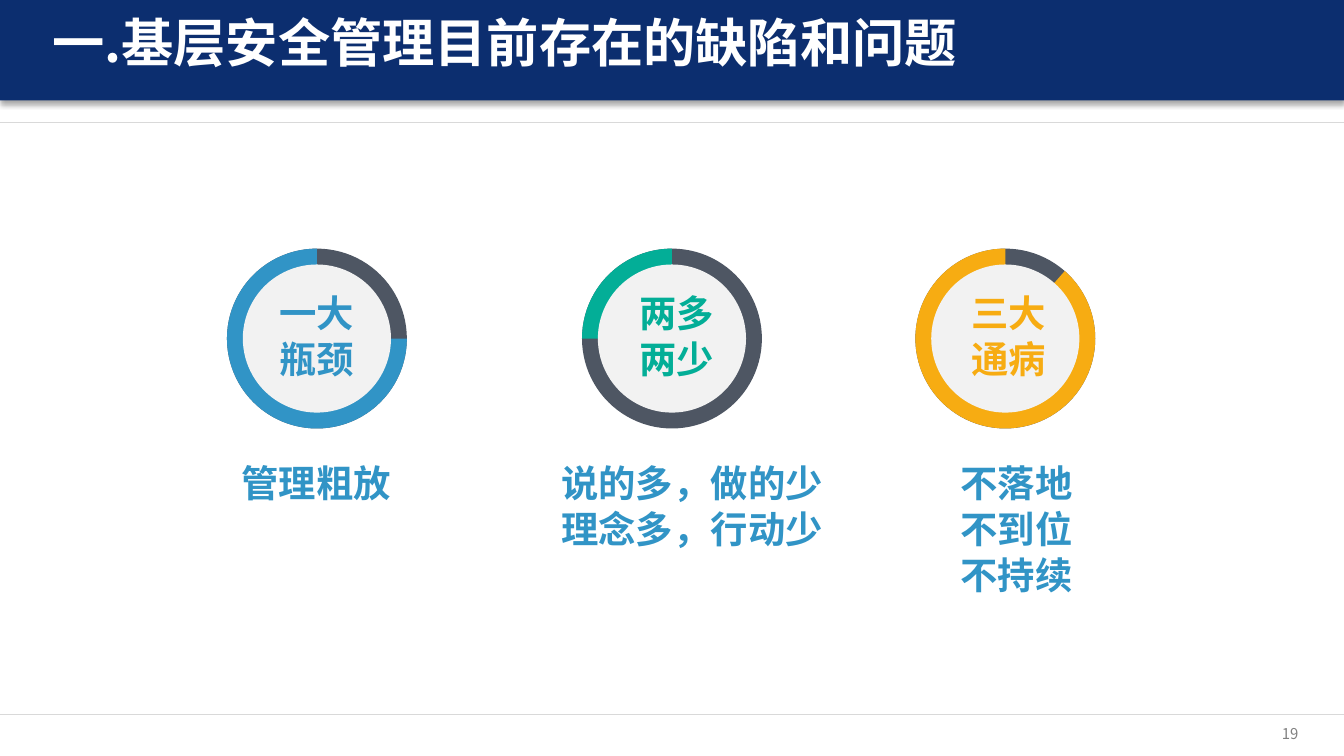
import pptx
import pptx.util
import pptx.dml.color
import pptx.enum.shapes
import pptx.enum.text
import pptx.oxml.ns
from lxml import etree

Cm = pptx.util.Cm
Pt = pptx.util.Pt
SHAPE = pptx.enum.shapes.MSO_SHAPE
ALIGN = pptx.enum.text.PP_ALIGN
ANCHOR = pptx.enum.text.MSO_ANCHOR
qn = pptx.oxml.ns.qn

FONT = "Noto Sans CJK SC"
COLORS = {
    "navy": "0C2E6F", "white": "FFFFFF", "rule": "D9D9D9", "slate": "4E5663",
    "disc": "F2F2F2", "blue": "3194C6", "green": "03AE97", "amber": "F7AC12",
    "gray": "808080", "black": "000000",
}
WIDTH, HEIGHT = 25.4, 14.29
RING_Y, RING_SIZE, DISC_SIZE = 6.4, 3.4, 2.8
LABEL_WIDTH, LABEL_HEIGHT = 3.18, 1.86
NOTE_TOP, NOTE_LINE = 8.79, 0.94
RULES = [2.31, 13.51]

TITLE = "一.基层安全管理目前存在的缺陷和问题"
PAGE_NUMBER = "19"
RINGS = [
    {"x": 5.99, "color": "blue", "start": 0, "label": ["一大", "瓶颈"], "label_x": 5.99,
     "note": ["管理粗放"], "note_x": 5.98, "note_width": 4.29},
    {"x": 12.7, "color": "green", "start": 180, "label": ["两多", "两少"], "label_x": 12.79,
     "note": ["说的多，做的少", "理念多，行动少"], "note_x": 13.08, "note_width": 5.94},
    {"x": 19.0, "color": "amber", "start": 311.4, "label": ["三大", "通病"], "label_x": 19.06,
     "note": ["不落地", "不到位", "不持续"], "note_x": 19.21, "note_width": 4.29},
]


def rgb(name):
    return pptx.dml.color.RGBColor.from_string(COLORS[name])


def write(box, lines, size, color, bold=True, align=ALIGN.CENTER,
          anchor=ANCHOR.TOP, before=0, spacing=0.9):
    frame = box.text_frame
    frame.word_wrap = True
    frame.auto_size = pptx.enum.text.MSO_AUTO_SIZE.NONE
    frame.vertical_anchor = anchor
    frame.margin_left = frame.margin_right = frame.margin_top = frame.margin_bottom = 0
    for index, line in enumerate(lines):
        para = frame.add_paragraph() if index else frame.paragraphs[0]
        para.alignment = align
        para.space_before = Pt(before)
        para.line_spacing = spacing
        span = para.add_run()
        span.text = line
        span.font.name = FONT
        span.font.size = Pt(size)
        span.font.bold = bold
        span.font.color.rgb = rgb(color)
    for props in box.element.iter(qn("a:rPr")):
        etree.SubElement(props, qn("a:ea"), typeface=FONT)


def add_filled(shapes, kind, left, top, width, height, color):
    shape = shapes.add_shape(kind, Cm(left), Cm(top), Cm(width), Cm(height))
    shape.shadow.inherit = False
    shape.fill.solid()
    shape.fill.fore_color.rgb = rgb(color)
    shape.line.fill.background()
    return shape


def add_round(shapes, kind, x, size, color):
    return add_filled(shapes, kind, x - size / 2, RING_Y - size / 2, size, size, color)


def add_text(shapes, lines, left, top, width, height, **style):
    box = shapes.add_textbox(Cm(left), Cm(top), Cm(width), Cm(height))
    write(box, lines, **style)


def add_rule(page, y):
    rule = page.shapes.add_connector(
        pptx.enum.shapes.MSO_CONNECTOR.STRAIGHT, Cm(0), Cm(y), Cm(WIDTH), Cm(y))
    rule.line.color.rgb = rgb("rule")
    rule.line.width = Pt(0.25)
    etree.SubElement(rule.element.spPr, qn("a:effectLst"))


def add_header(page):
    bar = add_filled(page.shapes, SHAPE.RECTANGLE, 0, -0.13, WIDTH, 2.03, "navy")
    effects = bar.element.spPr.find(qn("a:effectLst"))
    shadow = etree.SubElement(effects, qn("a:outerShdw"), blurRad=str(Pt(3)),
                              dist=str(Pt(1.8)), dir="5400000", algn="t", rotWithShape="0")
    tint = etree.SubElement(shadow, qn("a:srgbClr"), val=COLORS["black"])
    etree.SubElement(tint, qn("a:alpha"), val="35000")
    title = page.shapes.title
    title.left, title.top, title.width, title.height = Cm(0.99), Cm(0.33), Cm(21.69), Cm(1.19)
    write(title, [TITLE], size=28, color="white", align=ALIGN.LEFT)
    title.element.getparent().append(title.element)


def add_ring(page, ring):
    group = page.shapes.add_group_shape()
    add_round(group.shapes, SHAPE.OVAL, ring["x"], RING_SIZE, "slate")
    wedge = add_round(group.shapes, SHAPE.PIE, ring["x"], RING_SIZE, ring["color"])
    wedge.adjustments[0] = ring["start"] * 0.6
    wedge.adjustments[1] = 270 * 0.6
    add_round(group.shapes, SHAPE.OVAL, ring["x"], DISC_SIZE, "disc")
    add_text(group.shapes, ring["label"], ring["label_x"] - LABEL_WIDTH / 2,
             RING_Y - LABEL_HEIGHT / 2, LABEL_WIDTH, LABEL_HEIGHT,
             size=20, color=ring["color"], anchor=ANCHOR.MIDDLE, before=3)
    add_text(page.shapes, ring["note"], ring["note_x"] - ring["note_width"] / 2, NOTE_TOP,
             ring["note_width"], NOTE_LINE * len(ring["note"]),
             size=20, color="blue", before=3)


def main():
    deck = pptx.Presentation()
    deck.slide_width, deck.slide_height = Cm(WIDTH), Cm(HEIGHT)
    page = deck.slides.add_slide(deck.slide_layouts[5])
    add_filled(page.shapes, SHAPE.RECTANGLE, 0, 13.51, WIDTH, 0.77, "white")
    for y in RULES:
        add_rule(page, y)
    add_header(page)
    for ring in RINGS:
        add_ring(page, ring)
    add_text(page.shapes, [PAGE_NUMBER], 23.5, 13.69, 1.04, 0.36, size=8, color="gray",
             bold=False, align=ALIGN.RIGHT, anchor=ANCHOR.MIDDLE, spacing=1.0)
    deck.save("out.pptx")


if __name__ == "__main__":
    main()
